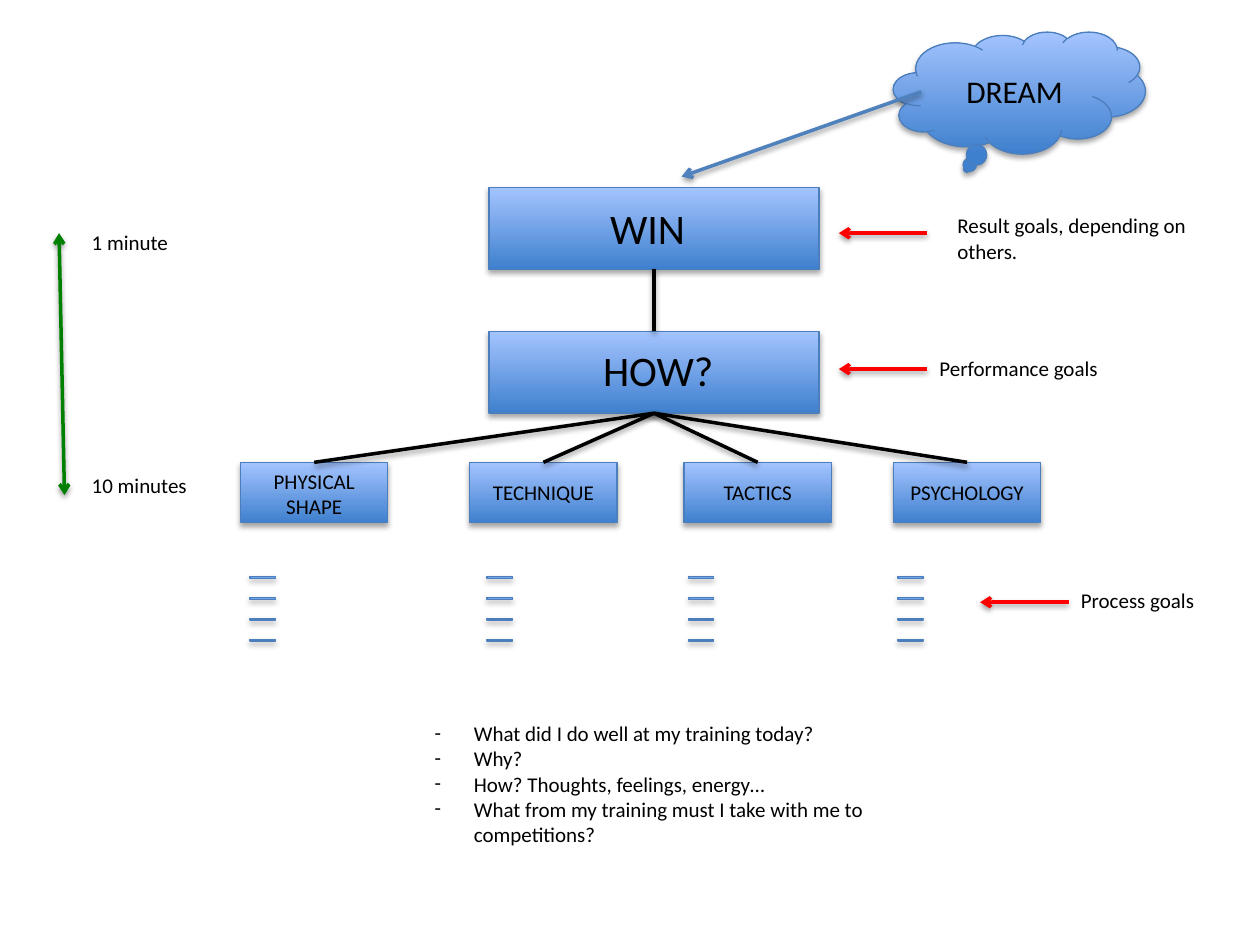
from lxml.etree import SubElement
from pptx import Presentation
from pptx.dml.color import RGBColor
from pptx.enum.shapes import MSO_CONNECTOR as CONNECTOR, MSO_SHAPE as SHAPE
from pptx.enum.text import MSO_ANCHOR, MSO_AUTO_SIZE as AUTO_SIZE, PP_ALIGN as ALIGN
from pptx.oxml.ns import qn
from pptx.util import Cm, Pt

COLORS = {
    "fill_bottom": "3F80CE",
    "fill_top": "A4C4FF",
    "outline": "4B7EBC",
    "text": "000000",
    "tree": "000000",
    "dream": "4F81BD",
    "goal": "FF0000",
    "time": "008000",
}
FONT = "Calibri"

# Sizes and places in centimetres
GOAL_LEFT, GOAL_W, GOAL_H = 9.86, 6.65, 1.65
WIN_TOP, HOW_TOP = 3.78, 6.68
AREA_TOP, AREA_W, AREA_H = 9.32, 2.97, 1.22
DASH_TOP, DASH_STEP, DASH_COUNT = 11.58, 0.42, 4
ARROW_LENGTH = 1.78

# name, left of box, left of dashes, top and height of label
AREAS = [
    ("PHYSICAL SHAPE", 4.85, 4.95, 9.32, 1.27),
    ("TECHNIQUE", 9.47, 9.73, 9.55, 0.76),
    ("TACTICS", 13.79, 13.79, 9.55, 0.76),
    ("PSYCHOLOGY", 18.01, 18.01, 9.55, 0.76),
]
# label, its box, start of the arrow
GOAL_KINDS = [
    ("Result goals, depending on others.", (19.05, 4.17, 5.23, 1.27), (18.69, 4.7)),
    ("Performance goals", (18.69, 7.04, 5.36, 0.76), (18.69, 7.44)),
    ("Process goals", (21.54, 11.71, 3.18, 0.76), (21.54, 12.14)),
]
QUESTIONS = [
    "What did I do well at my training today?",
    "Why?",
    "How? Thoughts, feelings, energy…",
    "What from my training must I take with me to competitions?",
]


def rgb(name):
    return RGBColor.from_string(COLORS[name])


def add_shadow(sp, dist, alpha):
    effects = SubElement(sp._element.spPr, qn("a:effectLst"))
    shadow = SubElement(effects, qn("a:outerShdw"), blurRad="40000", dist=str(dist),
                        dir="5400000", rotWithShape="0")
    color = SubElement(shadow, qn("a:srgbClr"), val="000000")
    SubElement(color, qn("a:alpha"), val=str(alpha * 1000))


def add_block(slide, kind, *box):
    """Add a shape with the blue gradient, thin outline and soft shadow."""
    sp = slide.shapes.add_shape(kind, *map(Cm, box))
    sp.fill.gradient()
    sp.fill.gradient_angle = 90
    for stop, name in zip(sp.fill.gradient_stops, ("fill_bottom", "fill_top")):
        stop.color.rgb = rgb(name)
        stop.position = 0 if name == "fill_bottom" else 1
    sp.line.color.rgb = rgb("outline")
    sp.line.width = Pt(0.75)
    add_shadow(sp, 23000, 35)


def add_line(slide, start, end, color, heads=()):
    sp = slide.shapes.add_connector(CONNECTOR.STRAIGHT, *map(Cm, start + end))
    sp.line.color.rgb = rgb(color)
    sp.line.width = Pt(2)
    for head in heads:
        SubElement(sp.line._ln, qn(f"a:{head}"), type="arrow")
    add_shadow(sp, 20000, 38)


def write(p, text, size):
    r = p.add_run()
    r.text = text
    for name, value in {"name": FONT, "size": Pt(size)}.items():
        setattr(r.font, name, value)
    r.font.color.rgb = rgb("text")


def add_label(slide, text, box, size=12, align=ALIGN.LEFT):
    tf = slide.shapes.add_textbox(*map(Cm, box)).text_frame
    tf.word_wrap = True
    tf.auto_size = AUTO_SIZE.SHAPE_TO_FIT_TEXT
    p = tf.paragraphs[0]
    p.alignment = align
    write(p, text, size)


def fill_list(sp, items, box):
    for name, value in zip(("left", "top", "width", "height"), box):
        setattr(sp, name, Cm(value))
    tf = sp.text_frame
    tf.auto_size = AUTO_SIZE.SHAPE_TO_FIT_TEXT
    tf.vertical_anchor = MSO_ANCHOR.TOP
    for i, item in enumerate(items):
        p = tf.add_paragraph() if i else tf.paragraphs[0]
        p.space_before = Pt(0)
        pPr = p._p.get_or_add_pPr()
        pPr.set("marL", str(Cm(0.79)))
        pPr.set("indent", str(Cm(-0.79)))
        SubElement(pPr, qn("a:buFont"), typeface=FONT)
        SubElement(pPr, qn("a:buChar"), char="-")
        write(p, item, 12)


def add_goals(slide):
    add_block(slide, SHAPE.CLOUD_CALLOUT, 18.01, 0.64, 5.08, 2.46)
    add_label(slide, "DREAM", (19.23, 1.32, 3.05, 1.02), 18)
    for text, top, label_box in (
        ("WIN", WIN_TOP, (10.26, 3.96, 5.59, 1.27)),
        ("HOW?", HOW_TOP, (10.69, 6.83, 5.16, 1.27)),
    ):
        add_block(slide, SHAPE.RECTANGLE, GOAL_LEFT, top, GOAL_W, GOAL_H)
        add_label(slide, text, label_box, 24, ALIGN.CENTER)
    add_line(slide, (18.57, 1.85), (13.74, 3.56), "dream", ["tailEnd"])


def add_areas(slide):
    for name, left, dash_left, label_top, label_h in AREAS:
        add_block(slide, SHAPE.RECTANGLE, left, AREA_TOP, AREA_W, AREA_H)
        add_label(slide, name, (left, label_top, AREA_W, label_h), align=ALIGN.CENTER)
        for i in range(DASH_COUNT):
            add_block(slide, SHAPE.MATH_MINUS, dash_left, DASH_TOP + i * DASH_STEP, 0.69, 0.13)


def add_tree_lines(slide):
    center = GOAL_LEFT + GOAL_W / 2
    add_line(slide, (center, WIN_TOP + GOAL_H), (center, HOW_TOP), "tree")
    for _, left, *_ in AREAS:
        add_line(slide, (center, HOW_TOP + GOAL_H), (left + AREA_W / 2, AREA_TOP), "tree")


def add_goal_kinds(slide):
    for text, box, (x, y) in GOAL_KINDS:
        add_label(slide, text, box)
        add_line(slide, (x, y), (x - ARROW_LENGTH, y), "goal", ["tailEnd"])


def add_time_scale(slide):
    add_line(slide, (1.19, 4.7), (1.3, 9.98), "time", ["headEnd", "tailEnd"])
    for text, top in (("1 minute", 4.5), ("10 minutes", 9.4)):
        add_label(slide, text, (1.6, top, 2.64, 0.76))


def main():
    prs = Presentation()
    prs.slide_width, prs.slide_height = Cm(25.4), Cm(19.05)
    slide = prs.slides.add_slide(prs.slide_layouts[1])
    title, body = slide.placeholders
    title._element.getparent().remove(title._element)

    add_goals(slide)
    add_areas(slide)
    add_tree_lines(slide)
    add_goal_kinds(slide)
    add_time_scale(slide)
    fill_list(body, QUESTIONS, (8.51, 14.4, 9.86, 2.82))
    prs.save("out.pptx")


if __name__ == "__main__":
    main()
